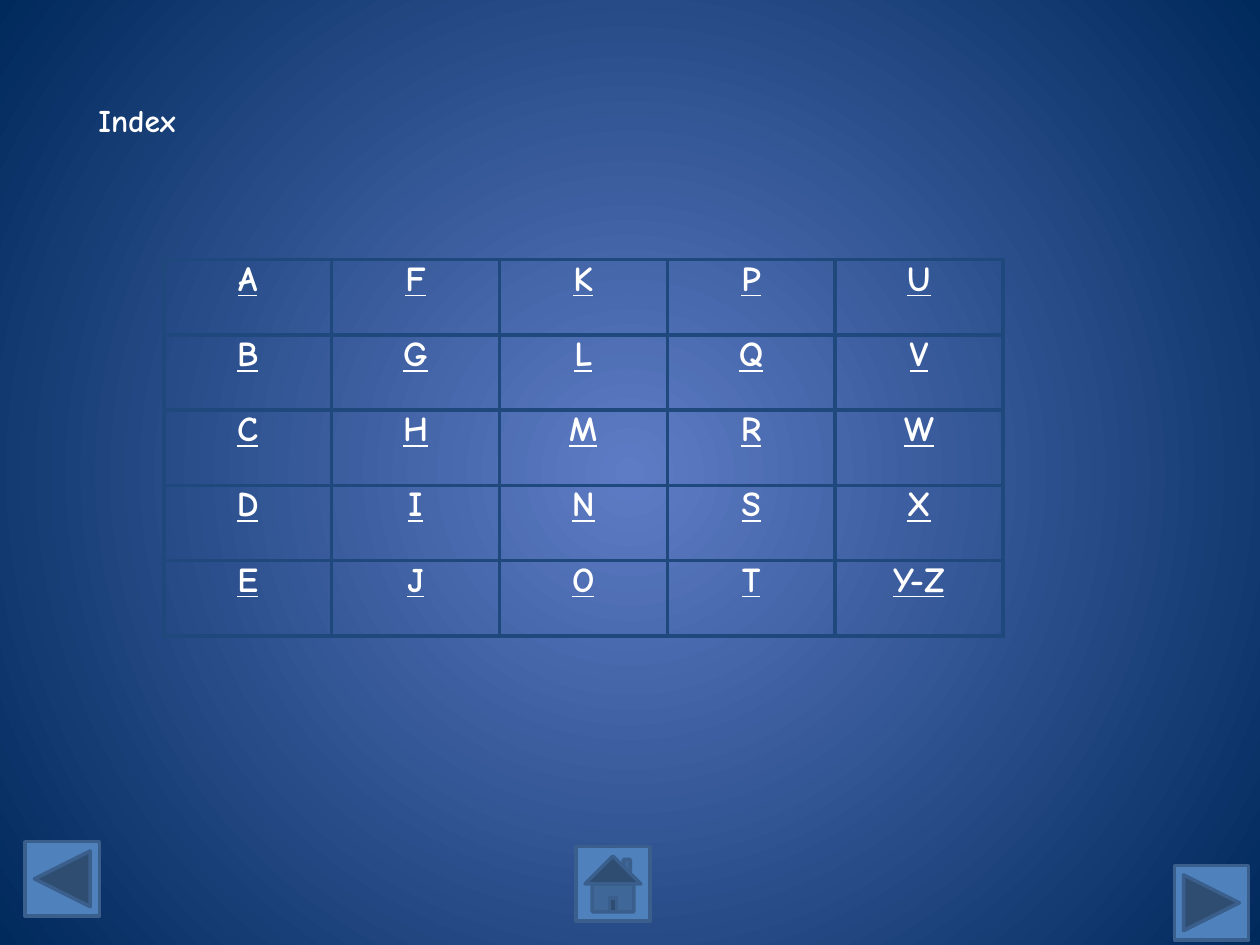
from dataclasses import dataclass

from lxml import etree
from pptx import Presentation
from pptx.dml.color import RGBColor
from pptx.enum.shapes import MSO_SHAPE
from pptx.enum.text import MSO_ANCHOR, PP_ALIGN
from pptx.oxml.ns import qn
from pptx.slide import Slide
from pptx.table import _Cell
from pptx.text.text import Font
from pptx.util import Inches, Pt

HOME = MSO_SHAPE.ACTION_BUTTON_HOME
NEXT = MSO_SHAPE.ACTION_BUTTON_FORWARD_OR_NEXT
PREVIOUS = MSO_SHAPE.ACTION_BUTTON_BACK_OR_PREVIOUS
TOP = MSO_ANCHOR.TOP
LEFT, CENTER = PP_ALIGN.LEFT, PP_ALIGN.CENTER

FONT_NAME = "Comic Neue"
WHITE = "FFFFFF"
GRID_COLOR = "1F497D"
GRID_WIDTH = 2.25
BUTTON_FILL = "4F81BD"
BUTTON_LINE = "3A5F8C"
BUTTON_SIZE = 0.59
GLOW_CENTER = "5E7CC5"
GLOW_EDGE = "00295C"
ROWS = 5
COLUMNS = 5
ENTRIES = [*"ABCDEFGHIJKLMNOPQRSTUVWX", "Y-Z"]


@dataclass
class Button:
    kind: MSO_SHAPE
    left: float
    top: float


BUTTONS = [
    Button(HOME, 4.57, 6.72),
    Button(NEXT, 9.32, 6.87),
    Button(PREVIOUS, 0.2, 6.68),
]


def color(value: str) -> RGBColor:
    return RGBColor.from_string(value)


def format_font(font: Font, size: float, underline: bool = False) -> None:
    font.name = FONT_NAME
    font.size = Pt(size)
    font.bold = True
    font.underline = underline
    font.color.rgb = color(WHITE)


def paint_background(slide: Slide) -> None:
    fill = slide.background.fill
    fill.gradient()
    for stop, position, value in zip(fill.gradient_stops, (0, 1), (GLOW_CENTER, GLOW_EDGE)):
        stop.position = position
        stop.color.rgb = color(value)
    gradient = slide.element.find(".//" + qn("a:gradFill"))
    linear = gradient.find(qn("a:lin"))
    radial = etree.Element(qn("a:path"), {"path": "circle"})
    sides = {side: "50000" for side in "ltrb"}
    etree.SubElement(radial, qn("a:fillToRect"), sides)
    gradient.replace(linear, radial)


def add_title(slide: Slide) -> None:
    title = slide.shapes.title
    title.left, title.top = Inches(0.68), Inches(0.75)
    title.width, title.height = Inches(8.98), Inches(1.31)
    text_frame = title.text_frame
    text_frame.text = "Index"
    text_frame.vertical_anchor = TOP
    paragraph = text_frame.paragraphs[0]
    paragraph.alignment = LEFT
    format_font(paragraph.runs[0].font, 18)


def set_borders(cell: _Cell) -> None:
    properties = cell._tc.get_or_add_tcPr()
    for index, side in enumerate("LRTB"):
        line = etree.Element(qn(f"a:ln{side}"), {"w": str(Pt(GRID_WIDTH))})
        fill = etree.SubElement(line, qn("a:solidFill"))
        etree.SubElement(fill, qn("a:srgbClr"), {"val": GRID_COLOR})
        properties.insert(index, line)


def fill_cell(cell: _Cell, entry: str) -> None:
    cell.fill.background()
    set_borders(cell)
    cell.margin_left = cell.margin_right = Inches(0.07)
    cell.margin_top = cell.margin_bottom = 0
    cell.text_frame.text = entry
    paragraph = cell.text_frame.paragraphs[0]
    paragraph.alignment = CENTER
    format_font(paragraph.runs[0].font, 20, underline=True)


def add_index_table(slide: Slide) -> None:
    table = slide.shapes.add_table(
        ROWS, COLUMNS, Inches(1.3), Inches(2.06), Inches(6.66), Inches(2.99)
    ).table
    table.first_row = False
    table.horz_banding = False
    for position, entry in enumerate(ENTRIES):
        column, row = divmod(position, ROWS)
        fill_cell(table.cell(row, column), entry)


def add_button(slide: Slide, button: Button) -> None:
    shape = slide.shapes.add_shape(
        button.kind,
        Inches(button.left),
        Inches(button.top),
        Inches(BUTTON_SIZE),
        Inches(BUTTON_SIZE),
    )
    shape.shadow.inherit = False
    shape.fill.solid()
    shape.fill.fore_color.rgb = color(BUTTON_FILL)
    shape.line.color.rgb = color(BUTTON_LINE)
    shape.line.width = Pt(2)


def main() -> None:
    presentation = Presentation()
    presentation.slide_width = Inches(10)
    presentation.slide_height = Inches(7.5)
    slide = presentation.slides.add_slide(presentation.slide_layouts[5])
    paint_background(slide)
    add_title(slide)
    add_index_table(slide)
    for button in BUTTONS:
        add_button(slide, button)
    presentation.save("out.pptx")


if __name__ == "__main__":
    main()
